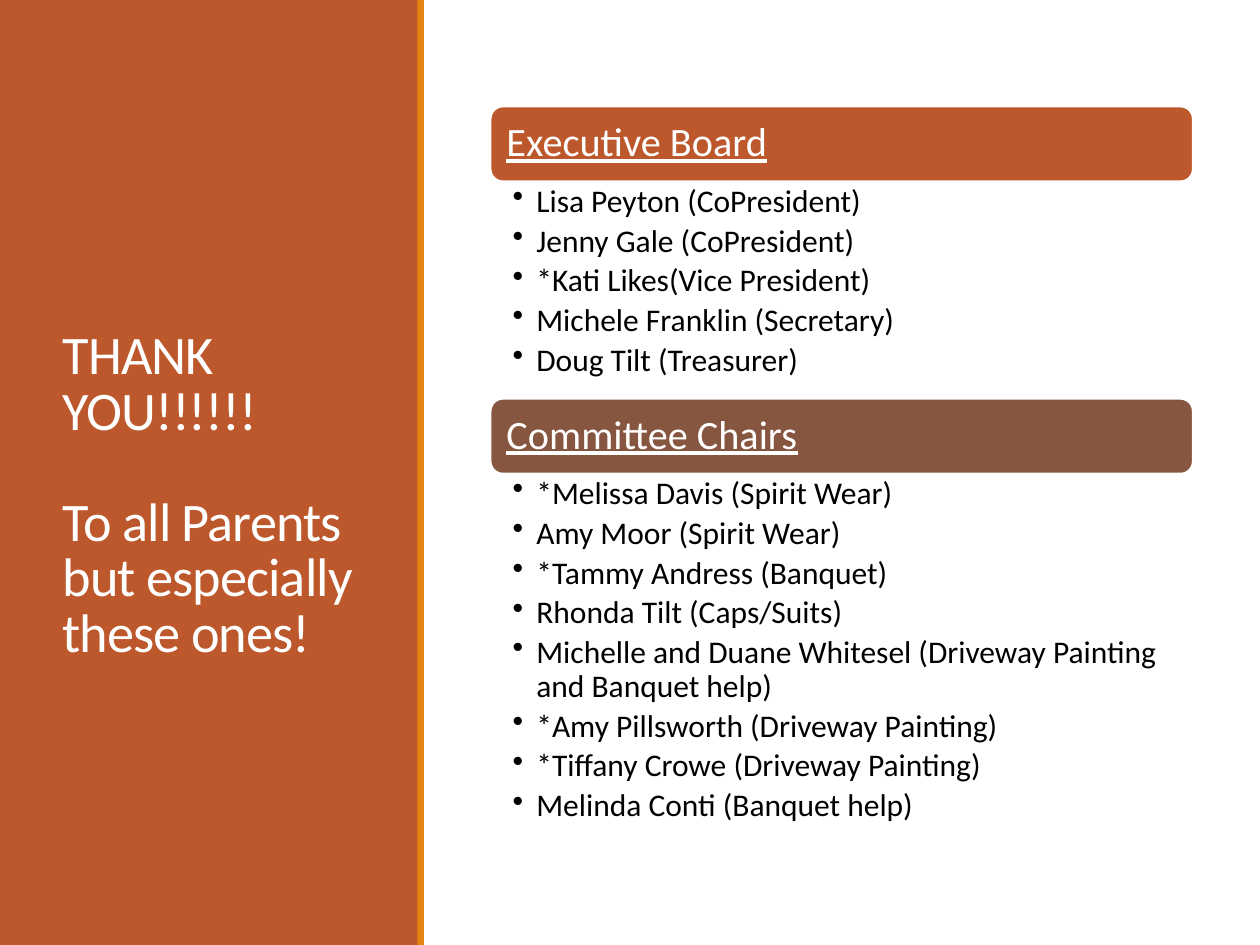
import pptx
import pptx.dml.color
import pptx.enum.shapes
import pptx.enum.text
import pptx.oxml
import pptx.oxml.ns
import pptx.util

Pt = pptx.util.Pt
Shape = pptx.enum.shapes.MSO_SHAPE
Anchor = pptx.enum.text.MSO_ANCHOR
Align = pptx.enum.text.PP_ALIGN

COLORS = {
    "rust": "BD582C",
    "orange": "E48312",
    "brown": "865640",
    "white": "FFFFFF",
    "black": "000000",
}
SLIDE_WIDTH, SLIDE_HEIGHT = 720, 540
SECTION_LEFT, SECTION_WIDTH = 280.25, 401.5
HEADER_HEIGHT = 43

THANKS = ["THANK YOU!!!!!!", "To all Parents but especially these ones!"]
# Heading, header colour, header top, list height, members
SECTIONS = [
    ("Executive Board", "rust", 60.75, 123.5, [
        "Lisa Peyton (CoPresident)",
        "Jenny Gale (CoPresident)",
        "*Kati Likes(Vice President)",
        "Michele Franklin (Secretary)",
        "Doug Tilt (Treasurer)",
    ]),
    ("Committee Chairs", "brown", 227.75, 214, [
        "*Melissa Davis (Spirit Wear)",
        "Amy Moor (Spirit Wear)",
        "*Tammy Andress (Banquet)",
        "Rhonda Tilt (Caps/Suits)",
        "Michelle and Duane Whitesel (Driveway Painting and Banquet help)",
        "*Amy Pillsworth (Driveway Painting)",
        "*Tiffany Crowe (Driveway Painting)",
        "Melinda Conti (Banquet help)",
    ]),
]


def rgb(color):
    return pptx.dml.color.RGBColor.from_string(COLORS[color])


class ThankYouSlide:
    font = "Calibri"

    def __init__(self, slide):
        self.slide = slide

    def block(self, kind, left, top, width, height, color):
        shape = self.slide.shapes.add_shape(
            kind, Pt(left), Pt(top), Pt(width), Pt(height))
        shape.shadow.inherit = False
        shape.fill.solid()
        shape.fill.fore_color.rgb = rgb(color)
        shape.line.fill.background()
        return shape

    def text_box(self, left, top, width, height, inset_x, inset_y):
        box = self.slide.shapes.add_textbox(
            Pt(left), Pt(top), Pt(width), Pt(height))
        frame = box.text_frame
        frame.word_wrap = True
        frame.margin_left = frame.margin_right = Pt(inset_x)
        frame.margin_top = frame.margin_bottom = Pt(inset_y)
        return frame

    def style(self, paragraph, size, color, line_spacing):
        paragraph.alignment = Align.LEFT
        paragraph.line_spacing = line_spacing
        paragraph.font.name = self.font
        paragraph.font.size = Pt(size)
        paragraph.font.color.rgb = rgb(color)

    def title(self, lines):
        frame = self.text_box(28.8, 73, 182.2, 422, 7.2, 3.6)
        frame.vertical_anchor = Anchor.MIDDLE
        frame.text = "\n".join(lines)
        for paragraph in frame.paragraphs:
            self.style(paragraph, 31, "white", 0.85)
            for run in paragraph.runs:
                run.font._element.set("spc", "-50")
        for paragraph in frame.paragraphs[1:]:
            paragraph.space_before = Pt(32)

    def header(self, heading, color, top):
        bar = self.block(Shape.ROUNDED_RECTANGLE, SECTION_LEFT, top,
                         SECTION_WIDTH, HEADER_HEIGHT, color)
        bar.line.color.rgb = rgb("white")
        bar.line.width = Pt(1.25)
        frame = bar.text_frame
        frame.word_wrap = True
        frame.vertical_anchor = Anchor.MIDDLE
        frame.text = heading
        self.style(frame.paragraphs[0], 23, "white", 0.9)
        frame.paragraphs[0].font.underline = True

    def bullets(self, members, top, height):
        frame = self.text_box(SECTION_LEFT, top, SECTION_WIDTH, height, 12.75, 2)
        frame.text = "\n".join(members)
        for paragraph in frame.paragraphs:
            properties = paragraph._p.get_or_add_pPr()
            properties.set("marL", str(Pt(13.5)))
            properties.set("indent", str(Pt(-13.5)))
            properties.append(pptx.oxml.parse_xml(
                f'<a:buChar {pptx.oxml.ns.nsdecls("a")} char="•"/>'))
            self.style(paragraph, 18, "black", 0.9)
            paragraph.space_after = Pt(3.25)


def main():
    deck = pptx.Presentation()
    deck.slide_width, deck.slide_height = Pt(SLIDE_WIDTH), Pt(SLIDE_HEIGHT)
    page = ThankYouSlide(deck.slides.add_slide(deck.slide_layouts[6]))

    page.block(Shape.RECTANGLE, 0, 0, 239, SLIDE_HEIGHT, "rust")
    page.title(THANKS)
    page.block(Shape.RECTANGLE, 238.5, 0, 3.75, SLIDE_HEIGHT, "orange")
    for heading, color, top, list_height, members in SECTIONS:
        page.header(heading, color, top)
        page.bullets(members, top + HEADER_HEIGHT, list_height)

    deck.save("out.pptx")


if __name__ == "__main__":
    main()
